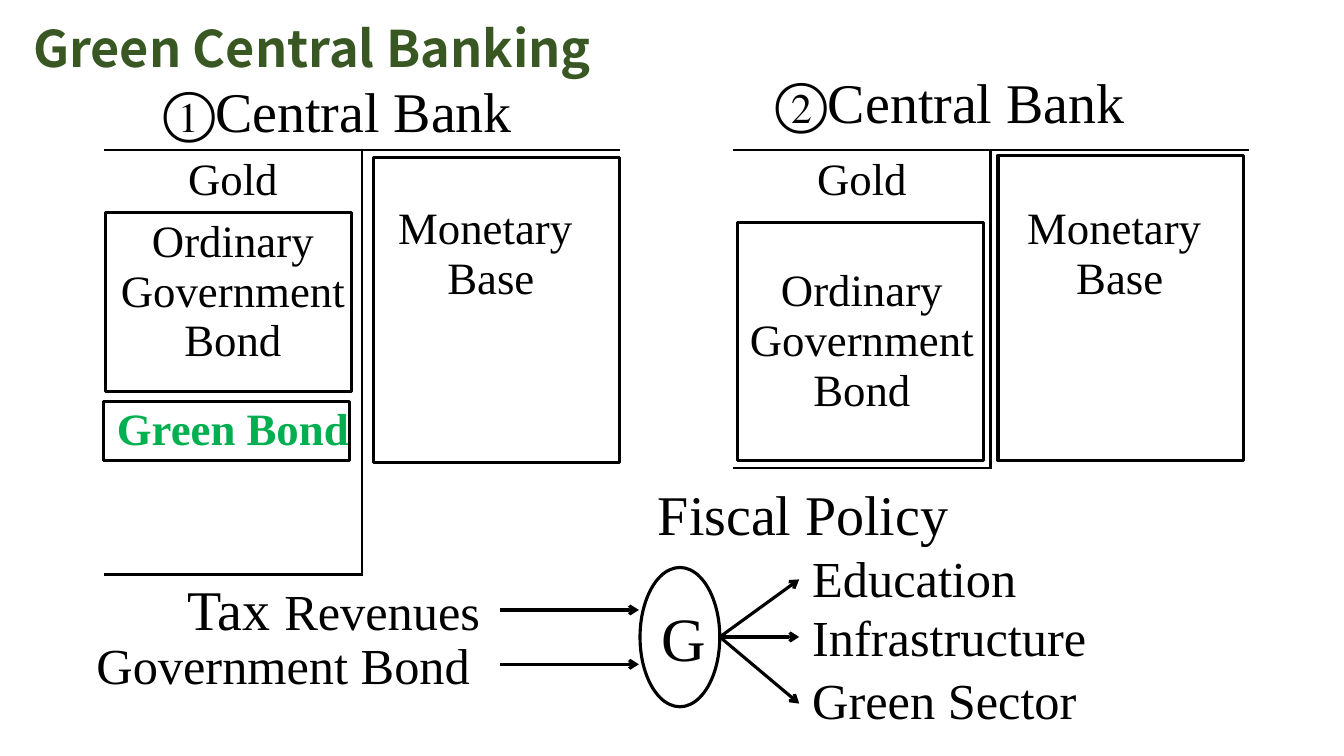
"""Builds the Green Central Banking slide: two balance sheets and the fiscal policy flow."""
from lxml.etree import SubElement
from pptx import Presentation
from pptx.dml.color import RGBColor
from pptx.enum.shapes import MSO_CONNECTOR, MSO_SHAPE
from pptx.enum.text import MSO_ANCHOR, MSO_AUTO_SIZE, PP_ALIGN
from pptx.oxml.ns import qn
from pptx.util import Cm, Pt

BLACK, GREEN, DARK_GREEN = "000000", "00B050", "385723"
SERIF, SANS = "Times New Roman", "Noto Sans CJK JP"
LINE = Pt(2.25)


def rgb(value):
    return RGBColor.from_string(value)


def write(p, text, size, color=BLACK, name=SERIF, bold=False):
    r = p.add_run()
    r.text = text
    for key, value in {"size": Pt(size), "name": name, "bold": bold}.items():
        setattr(r.font, key, value)
    r.font.color.rgb = rgb(color)


prs = Presentation()
prs.slide_width, prs.slide_height = Cm(33.87), Cm(19.05)
s = prs.slides.add_slide(prs.slide_layouts[5])

title = s.shapes.title
for key, value in {"left": 0.58, "top": 0.3, "width": 17.07, "height": 1.8}.items():
    setattr(title, key, Cm(value))
tf = title.text_frame
for key, value in {"word_wrap": True, "vertical_anchor": MSO_ANCHOR.MIDDLE,
                   "auto_size": MSO_AUTO_SIZE.NONE}.items():
    setattr(tf, key, value)
tf.paragraphs[0].alignment = PP_ALIGN.LEFT
write(tf.paragraphs[0], "Green Central Banking", 36, DARK_GREEN, SANS, True)

bond = ["Ordinary", "Government", "Bond"]
sheets = [
    (2.62, [1.57, 4.75, 4.37], [["Gold"], bond, ["Green Bond"]], MSO_ANCHOR.TOP),
    (18.47, [1.63, 6.38], [["Gold"], bond], MSO_ANCHOR.MIDDLE),
]
for x, heights, assets, anchor in sheets:
    last = len(heights) - 1
    tbl = s.shapes.add_table(len(heights), 2, Cm(x), Cm(3.78), Cm(13), Cm(sum(heights))).table
    tbl.first_row = tbl.horz_banding = False
    for col in tbl.columns:
        col.width = Cm(6.5)
    for i, height in enumerate(heights):
        tbl.rows[i].height = Cm(height)
        for j in range(2):
            cell = tbl.cell(i, j)
            edges = {"lnL": j == 1, "lnR": j == 0, "lnT": i == 0, "lnB": i == last}
            tc_pr = cell._tc.get_or_add_tcPr()
            for tag, drawn in edges.items():
                ln = SubElement(tc_pr, qn("a:" + tag), w=str(LINE))
                fill = SubElement(ln, qn("a:solidFill" if drawn else "a:noFill"))
                if drawn:
                    SubElement(fill, qn("a:srgbClr"), val=BLACK)
            cell.fill.background()
    tbl.cell(0, 1).merge(tbl.cell(last, 1))
    tbl.cell(0, 1).margin_top = Cm(1.38)
    tbl.cell(1, 0).vertical_anchor = anchor
    entries = [(tbl.cell(i, 0), lines) for i, lines in enumerate(assets)]
    for cell, lines in entries + [(tbl.cell(0, 1), ["Monetary ", "Base"])]:
        tf = cell.text_frame
        for n, text in enumerate(lines):
            p = tf.add_paragraph() if n else tf.paragraphs[0]
            p.alignment = PP_ALIGN.CENTER
            green = text == "Green Bond"
            write(p, text, 32, GREEN if green else BLACK, bold=green)

outlines = [
    (MSO_SHAPE.RECTANGLE, 2.67, 5.36, 6.2, 4.5),
    (MSO_SHAPE.RECTANGLE, 2.62, 10.11, 6.2, 1.5),
    (MSO_SHAPE.RECTANGLE, 18.59, 5.61, 6.2, 6),
    (MSO_SHAPE.RECTANGLE, 9.42, 3.96, 6.2, 7.7),
    (MSO_SHAPE.RECTANGLE, 25.15, 3.91, 6.2, 7.7),
    (MSO_SHAPE.OVAL, 16.13, 14.3, 2.01, 3.51),
]
for kind, *box in outlines:
    sp = s.shapes.add_shape(kind, *map(Cm, box))
    sp.shadow.inherit = False
    sp.fill.background()
    sp.line.color.rgb = rgb(BLACK)
    sp.line.width = LINE

labels = [
    (3.86, 1.8, 10, 1.96, [("①Central Bank", 40)]),
    (19.3, 1.57, 10, 1.96, [("②Central Bank", 40)]),
    (16.33, 11.96, 7.98, 1.96, [("Fiscal Policy", 40)]),
    (4.47, 14.35, 8.13, 1.96, [("Tax ", 40), ("Revenues", 36)]),
    (2.18, 15.85, 10.41, 1.8, [("Government Bond", 36)]),
    (20.22, 13.67, 6.05, 2, [("Education", 36)]),
    (20.22, 15.16, 8.31, 1.8, [("Infrastructure", 36)]),
    (20.22, 16.74, 7.57, 2, [("Green Sector", 36)]),
    (16.41, 14.99, 1.45, 2.13, [("G", 44)]),
]
for *box, runs in labels:
    tf = s.shapes.add_textbox(*map(Cm, box)).text_frame
    tf.word_wrap = True
    tf.auto_size = MSO_AUTO_SIZE.SHAPE_TO_FIT_TEXT
    for text, size in runs:
        write(tf.paragraphs[0], text, size)

inflows = [(12.6, y, 16.1, y) for y in (15.37, 16.74)]
outflows = [(18.14, 16.05, 20.14, y) for y in (14.6, 16.05, 17.73)]
for ends in inflows + outflows:
    arrow = s.shapes.add_connector(MSO_CONNECTOR.STRAIGHT, *map(Cm, ends))
    arrow.line.color.rgb = rgb(BLACK)
    arrow.line.width = LINE
    SubElement(arrow.line._get_or_add_ln(), qn("a:tailEnd"), type="arrow")
    SubElement(arrow._element.spPr, qn("a:effectLst"))

prs.save("out.pptx")
